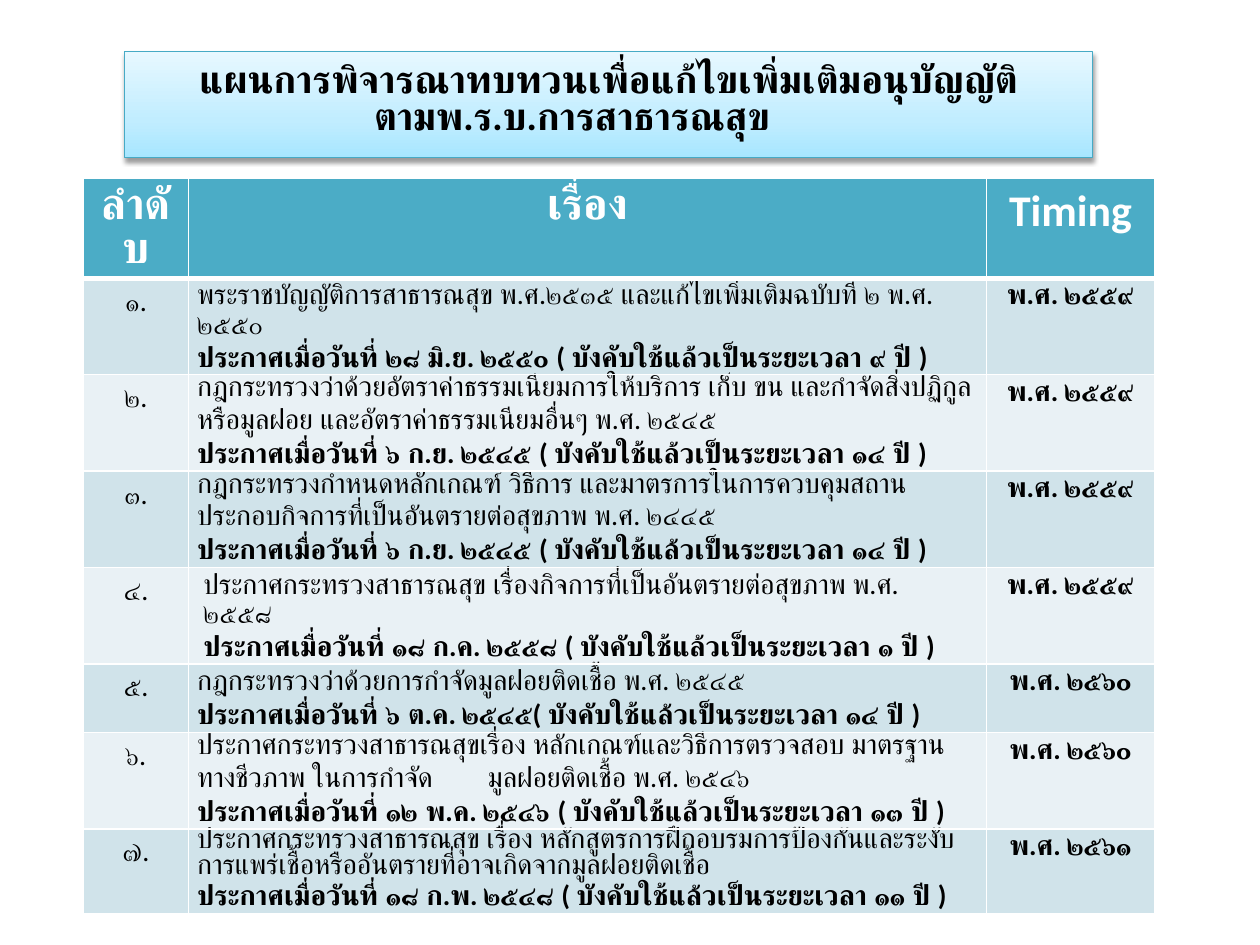
from dataclasses import dataclass
from lxml import etree
from pptx import Presentation
from pptx.dml.color import RGBColor
from pptx.enum.shapes import MSO_SHAPE
from pptx.enum.text import MSO_ANCHOR, PP_ALIGN
from pptx.oxml import parse_xml
from pptx.oxml.ns import qn
from pptx.util import Pt

RECT = MSO_SHAPE.RECTANGLE
MIDDLE = MSO_ANCHOR.MIDDLE
LEFT, CENTER = PP_ALIGN.LEFT, PP_ALIGN.CENTER
NS = 'xmlns:a="http://schemas.openxmlformats.org/drawingml/2006/main"'


@dataclass(frozen=True)
class Theme:
    font: str = "Calibri"
    ink: str = "000000"
    white: str = "FFFFFF"
    head: str = "4BACC6"
    bands: tuple = ("D0E3EA", "E9F1F5")
    edge: str = "46AAC5"
    glow: tuple = ((0, "A7E6FF"), (35, "C1EDFF"), (100, "E7F8FF"))
    title: float = 22.1
    label: float = 25
    body: float = 16


THEME = Theme()
TITLE = ("แผนการพิจารณาทบทวนเพื่อแก้ไขเพิ่มเติมอนุบัญญัติ",
         "ตามพ.ร.บ.การสาธารณสุข")
HEADS = ("ลำดับ", "เรื่อง", "Timing")
LAWS = (
    ("๑.", "พระราชบัญญัติการสาธารณสุข พ.ศ.๒๕๓๕ และแก้ไขเพิ่มเติมฉบับที่ ๒ พ.ศ. ๒๕๕๐",
     "ประกาศเมื่อวันที่ ๒๘ มิ.ย. ๒๕๕๐ ( บังคับใช้แล้วเป็นระยะเวลา ๙ ปี )", "พ.ศ. ๒๕๕๙"),
    ("๒.", "กฎกระทรวงว่าด้วยอัตราค่าธรรมเนียมการให้บริการ เก็บ ขน และกำจัดสิ่งปฏิกูลหรือมูลฝอย และอัตราค่าธรรมเนียมอื่นๆ พ.ศ. ๒๕๔๕",
     "ประกาศเมื่อวันที่ ๖ ก.ย. ๒๕๔๕ ( บังคับใช้แล้วเป็นระยะเวลา ๑๔ ปี )", "พ.ศ. ๒๕๕๙"),
    ("๓.", "กฎกระทรวงกำหนดหลักเกณฑ์ วิธีการ และมาตรการในการควบคุมสถานประกอบกิจการที่เป็นอันตรายต่อสุขภาพ พ.ศ. ๒๔๔๕",
     "ประกาศเมื่อวันที่ ๖ ก.ย. ๒๕๔๕ ( บังคับใช้แล้วเป็นระยะเวลา ๑๔ ปี )", "พ.ศ. ๒๕๕๙"),
    ("๔.", "ประกาศกระทรวงสาธารณสุข เรื่องกิจการที่เป็นอันตรายต่อสุขภาพ พ.ศ. ๒๕๕๘",
     "ประกาศเมื่อวันที่ ๑๘ ก.ค. ๒๕๕๘ ( บังคับใช้แล้วเป็นระยะเวลา ๑ ปี )", "พ.ศ. ๒๕๕๙"),
    ("๕.", "กฎกระทรวงว่าด้วยการกำจัดมูลฝอยติดเชื้อ พ.ศ. ๒๕๔๕",
     "ประกาศเมื่อวันที่ ๖ ต.ค. ๒๕๔๕( บังคับใช้แล้วเป็นระยะเวลา ๑๔ ปี )", "พ.ศ. ๒๕๖๐"),
    ("๖.", "ประกาศกระทรวงสาธารณสุขเรื่อง หลักเกณฑ์และวิธีการตรวจสอบ มาตรฐานทางชีวภาพ ในการกำจัด\tมูลฝอยติดเชื้อ พ.ศ. ๒๕๔๖",
     "ประกาศเมื่อวันที่ ๑๒ พ.ค. ๒๕๔๖ ( บังคับใช้แล้วเป็นระยะเวลา ๑๓ ปี )", "พ.ศ. ๒๕๖๐"),
    ("๗.", "ประกาศกระทรวงสาธารณสุข เรื่อง หลักสูตรการฝึกอบรมการป้องกันและระงับการแพร่เชื้อหรืออันตรายที่อาจเกิดจากมูลฝอยติดเชื้อ",
     "ประกาศเมื่อวันที่ ๑๘ ก.พ. ๒๕๔๘ ( บังคับใช้แล้วเป็นระยะเวลา ๑๑ ปี )", "พ.ศ. ๒๕๖๑"),
)


def assign(item, values):
    for name, value in values.items():
        setattr(item, name, value)


def write(frame, lines, size, color, align, **style):
    for i, (text, bold) in enumerate(lines):
        para = frame.paragraphs[0] if i == 0 else frame.add_paragraph()
        if "\t" in text:
            add_tab(para, 166)
        assign(para, {"alignment": align, **style})
        run = para.add_run()
        run.text = text
        assign(run.font, {"name": THEME.font, "size": Pt(size), "bold": bold})
        run.font.color.rgb = RGBColor.from_string(color)


def add_tab(para, pos):
    tabs = etree.SubElement(para._p.get_or_add_pPr(), qn("a:tabLst"))
    etree.SubElement(tabs, qn("a:tab"), pos=str(Pt(pos)), algn="l")


def add_title(slide):
    box = slide.shapes.add_shape(RECT, Pt(71.3), Pt(29.5), Pt(553), Pt(60.5))
    stops = "".join(
        f'<a:gs pos="{pos * 1000}"><a:srgbClr val="{color}"/></a:gs>'
        for pos, color in THEME.glow)
    props = box._element.spPr
    props.append(parse_xml(
        f'<a:gradFill {NS} rotWithShape="1"><a:gsLst>{stops}</a:gsLst>'
        '<a:lin ang="16200000" scaled="1"/></a:gradFill>'))
    box.line.color.rgb = RGBColor.from_string(THEME.edge)
    box.line.width = Pt(0.75)
    props.append(parse_xml(
        f'<a:effectLst {NS}><a:outerShdw blurRad="{Pt(3.1)}" dist="{Pt(1.6)}" '
        f'dir="5400000" rotWithShape="0"><a:srgbClr val="{THEME.ink}">'
        '<a:alpha val="38000"/></a:srgbClr></a:outerShdw></a:effectLst>'))
    frame = box.text_frame
    assign(frame, {"word_wrap": True, "vertical_anchor": MIDDLE,
                   "margin_bottom": Pt(8)})
    write(frame, [(line, True) for line in TITLE], THEME.title, THEME.ink,
          CENTER, line_spacing=0.8)
    frame.paragraphs[1]._p.get_or_add_pPr().set("marR", str(Pt(42)))


def paint(cell, color, base=1):
    props = cell._tc.get_or_add_tcPr()
    for side in "LRTB":
        width = base if side == "B" else 1
        props.append(parse_xml(
            f'<a:ln{side} {NS} w="{Pt(width)}"><a:solidFill>'
            f'<a:srgbClr val="{THEME.white}"/></a:solidFill></a:ln{side}>'))
    cell.fill.solid()
    cell.fill.fore_color.rgb = RGBColor.from_string(color)


def add_plan(slide):
    shape = slide.shapes.add_table(
        len(LAWS) + 1, len(HEADS), Pt(47.7), Pt(101.8), Pt(612), Pt(383))
    table = shape.table
    for col, width in zip(table.columns, (60, 456, 96)):
        col.width = Pt(width)
    for row in table.rows:
        row.height = Pt(29.4)
    for i, text in enumerate(HEADS):
        cell = table.cell(0, i)
        paint(cell, THEME.head, 3)
        write(cell.text_frame, [(text, True)], THEME.label, THEME.white, CENTER)
    for i, (mark, law, note, year) in enumerate(LAWS):
        side = Pt(8.6) if mark == "๔." else Pt(5)
        parts = (([(mark, False)], CENTER),
                 ([(law, False), (note, True)], LEFT),
                 ([(year, True)], CENTER))
        for j, (lines, align) in enumerate(parts):
            cell = table.cell(i + 1, j)
            paint(cell, THEME.bands[i % 2])
            if j:
                assign(cell, {"margin_left": side, "margin_right": side,
                              "margin_top": 0, "margin_bottom": 0})
            write(cell.text_frame, lines, THEME.body, THEME.ink, align)
    table.cell(len(LAWS), 1).text_frame.paragraphs[0].line_spacing = 0.9
    shape.height = Pt(383)


def main():
    deck = Presentation()
    assign(deck, {"slide_width": Pt(720), "slide_height": Pt(540)})
    slide = deck.slides.add_slide(deck.slide_layouts[6])
    add_title(slide)
    add_plan(slide)
    deck.save("out.pptx")


if __name__ == "__main__":
    main()
